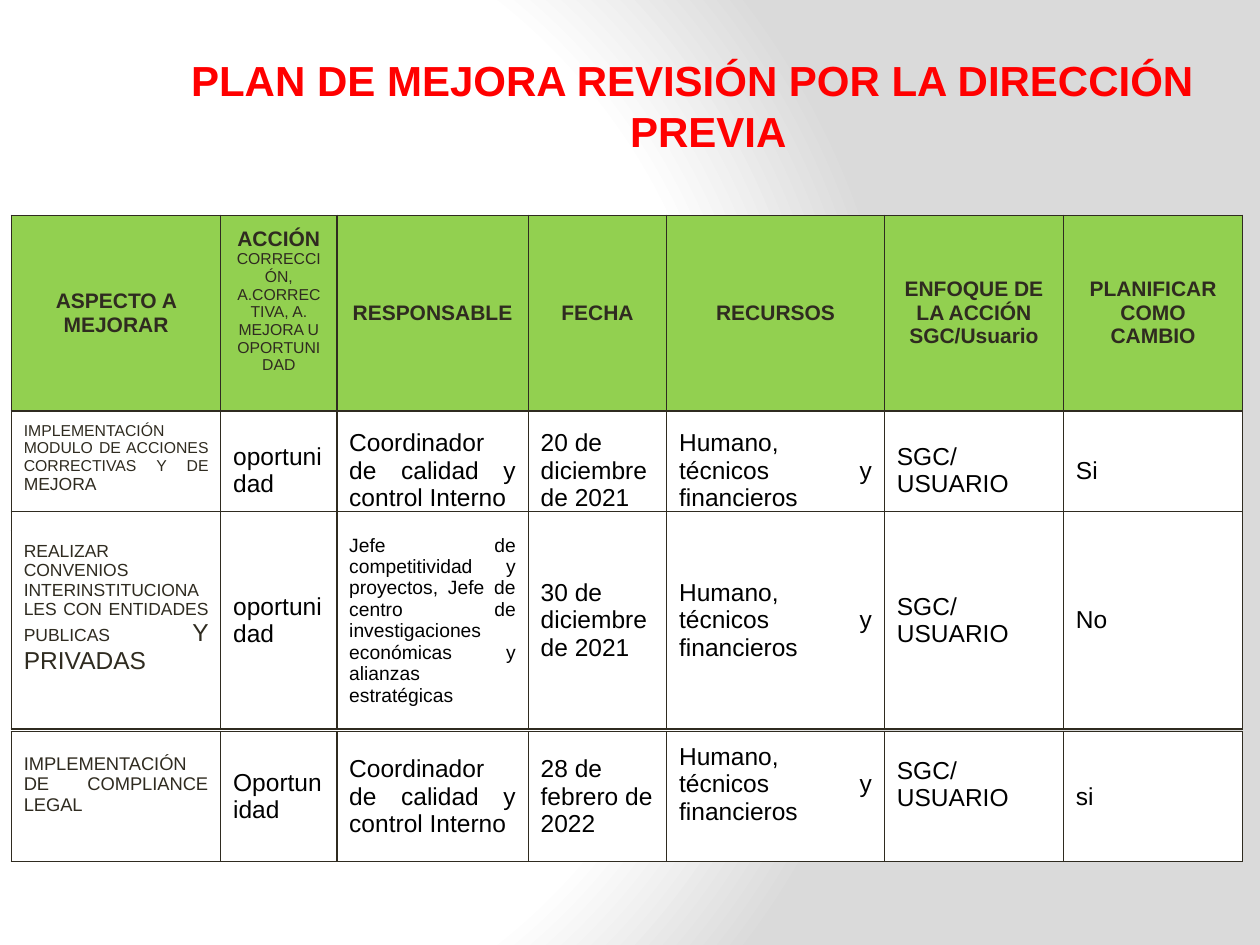
from dataclasses import dataclass

from pptx import Presentation
from pptx.dml.color import RGBColor
from pptx.enum.text import MSO_ANCHOR, PP_ALIGN
from pptx.oxml import parse_xml
from pptx.oxml.ns import nsdecls
from pptx.util import Cm, Pt


@dataclass(frozen=True)
class Theme:
    """Colours, font and type sizes of the slide."""
    font: str = "Arial"
    red: str = "FF0000"
    ink: str = "2F2B20"
    black: str = "000000"
    green: str = "92D050"
    white: str = "FFFFFF"
    grey: str = "DADADA"
    title: float = 24
    head: float = 12
    body: float = 14
    note: float = 11
    item: float = 10.5
    small: float = 10
    tiny: float = 9


T = Theme()
COLS = [4.22, 2.34, 3.86, 2.79, 4.39, 3.61, 3.61]
LIFT = 0.5
LEFT, MID, JUST = PP_ALIGN.LEFT, PP_ALIGN.CENTER, PP_ALIGN.JUSTIFY
MEANS = "Humano, técnicos y financieros"
FOCUS = "SGC/USUARIO"
CHIEF = "Coordinador de calidad y control Interno"


def apply(item, form):
    """Set each attribute of the item from a dict of values."""
    for key, value in form.items():
        setattr(item, key, value)


def write(para, runs, align):
    """Fill a paragraph with (text, size, colour, bold) runs."""
    para.alignment = align
    for text, size, color, bold in runs:
        run = para.add_run()
        run.text = text
        apply(run.font, {"name": T.font, "size": Pt(size), "bold": bold})
        run.font.color.rgb = RGBColor.from_string(color)


def head(*lines):
    """Describe a header cell, one paragraph per line."""
    return {"paras": [[(line, T.head, T.ink, True)] for line in lines],
            "align": MID, "fill": T.green}


def body(text, align=LEFT, size=T.body, lift=0):
    """Describe a body cell in black."""
    return {"paras": [[(text, size, T.black, False)]],
            "align": align, "fill": T.white, "lift": lift}


def topic(*parts):
    """Describe a first-column cell from (text, size) parts."""
    return {"paras": [[(text, size, T.ink, False) for text, size in parts]],
            "align": JUST, "fill": T.white, "lift": LIFT}


def edge(cell):
    """Draw a thin line on all four sides of a cell."""
    props = cell._tc.get_or_add_tcPr()
    for place, side in enumerate(("lnL", "lnR", "lnT", "lnB")):
        props.insert(place, parse_xml(
            f'<a:{side} {nsdecls("a")} w="12700"><a:solidFill>'
            f'<a:srgbClr val="{T.ink}"/></a:solidFill></a:{side}>'))


def fill_cell(cell, paras, align, fill, lift=0):
    """Write and format one table cell."""
    apply(cell, {"vertical_anchor": MSO_ANCHOR.MIDDLE,
                 "margin_left": Cm(0.25), "margin_right": Cm(0.25),
                 "margin_top": Cm(0.13), "margin_bottom": Cm(0.13 + lift)})
    frame = cell.text_frame
    for place, runs in enumerate(paras):
        para = frame.add_paragraph() if place else frame.paragraphs[0]
        write(para, runs, align)
    cell.fill.solid()
    cell.fill.fore_color.rgb = RGBColor.from_string(fill)
    edge(cell)


def add_grid(slide, left, top, highs, rows):
    """Place one table of the plan with the given row heights."""
    grid = slide.shapes.add_table(len(rows), len(COLS), Cm(left), Cm(top),
                                  Cm(sum(COLS)), Cm(sum(highs))).table
    apply(grid, {"first_row": False, "horz_banding": False})
    for col, wide in zip(grid.columns, COLS):
        col.width = Cm(wide)
    for row, high, cells in zip(grid.rows, highs, rows):
        row.height = Cm(high)
        for cell, form in zip(row.cells, cells):
            fill_cell(cell, **form)


def add_title(slide, left, top, wide, high):
    """Place the heading with its hanging indent."""
    box = slide.shapes.add_textbox(Cm(left), Cm(top), Cm(wide), Cm(high))
    frame = box.text_frame
    apply(frame, {"word_wrap": True, "vertical_anchor": MSO_ANCHOR.MIDDLE,
                  "margin_top": Cm(1.2)})
    para = frame.paragraphs[0]
    props = para._p.get_or_add_pPr()
    props.set("marL", str(Cm(0.64)))
    props.set("indent", str(-Cm(0.64)))
    write(para, [("PLAN DE MEJORA REVISIÓN POR LA DIRECCIÓN PREVIA",
                  T.title, T.red, True)], MID)


def add_back(slide):
    """Give the slide its round white to grey gradient."""
    stops = "".join(
        f'<a:gs pos="{pos}"><a:srgbClr val="{color}"/></a:gs>'
        for pos, color in ((0, T.white), (75000, T.white), (100000, T.grey)))
    slide.background.fill.solid()
    props = slide._element.cSld.bg.bgPr
    props.replace(props[0], parse_xml(
        f'<a:gradFill {nsdecls("a")} rotWithShape="1"><a:gsLst>{stops}'
        '</a:gsLst><a:path path="circle"><a:fillToRect l="20000" t="50000" '
        'r="100000" b="50000"/></a:path></a:gradFill>'))


def main():
    """Build and save the slide."""
    deck = Presentation()
    apply(deck, {"slide_width": Cm(25.4), "slide_height": Cm(19.05)})
    slide = deck.slides.add_slide(deck.slide_layouts[6])
    add_back(slide)
    add_title(slide, 2.11, -0.08, 23.7, 3.33)

    action = head("ACCIÓN")
    action["paras"].append([("CORRECCIÓN, A.CORRECTIVA, A. MEJORA U OPORTUNIDAD",
                             T.tiny, T.ink, False)])
    action["lift"] = LIFT
    heads = [head("ASPECTO A MEJORAR"), action, head("RESPONSABLE"),
             head("FECHA"), head("RECURSOS"),
             head("ENFOQUE DE LA ACCIÓN", "SGC/Usuario"),
             head("PLANIFICAR COMO CAMBIO")]
    module = [topic(("IMPLEMENTACIÓN MODULO DE ACCIONES CORRECTIVAS Y DE ", T.tiny),
                    ("MEJORA", T.small)),
              body("oportunidad", JUST), body(CHIEF, JUST),
              body("20 de diciembre de 2021"), body(MEANS, JUST),
              body(FOCUS), body("Si")]
    pacts = [topic(("REALIZAR CONVENIOS INTERINSTITUCIONALES CON ENTIDADES "
                    "PUBLICAS ", T.small), ("Y PRIVADAS", T.body)),
             body("oportunidad", JUST),
             body("Jefe de competitividad y proyectos, Jefe de centro de "
                  "investigaciones económicas y alianzas estratégicas",
                  JUST, T.note),
             body("30 de diciembre de 2021"), body(MEANS, JUST),
             body(FOCUS), body("No")]
    legal = [topic(("IMPLEMENTACIÓN DE COMPLIANCE LEGAL", T.item)),
             body("Oportunidad", JUST), body(CHIEF, JUST),
             body("28 de febrero de 2022"), body(MEANS, JUST, lift=LIFT),
             body(FOCUS, lift=LIFT), body("si")]
    for top, highs, rows in ((4.34, [3.94, 2.41], [heads, module]),
                             (10.31, [4.39], [pacts]),
                             (14.75, [2.62], [legal])):
        add_grid(slide, 0.23, top, highs, rows)
    deck.save("out.pptx")


if __name__ == "__main__":
    main()
